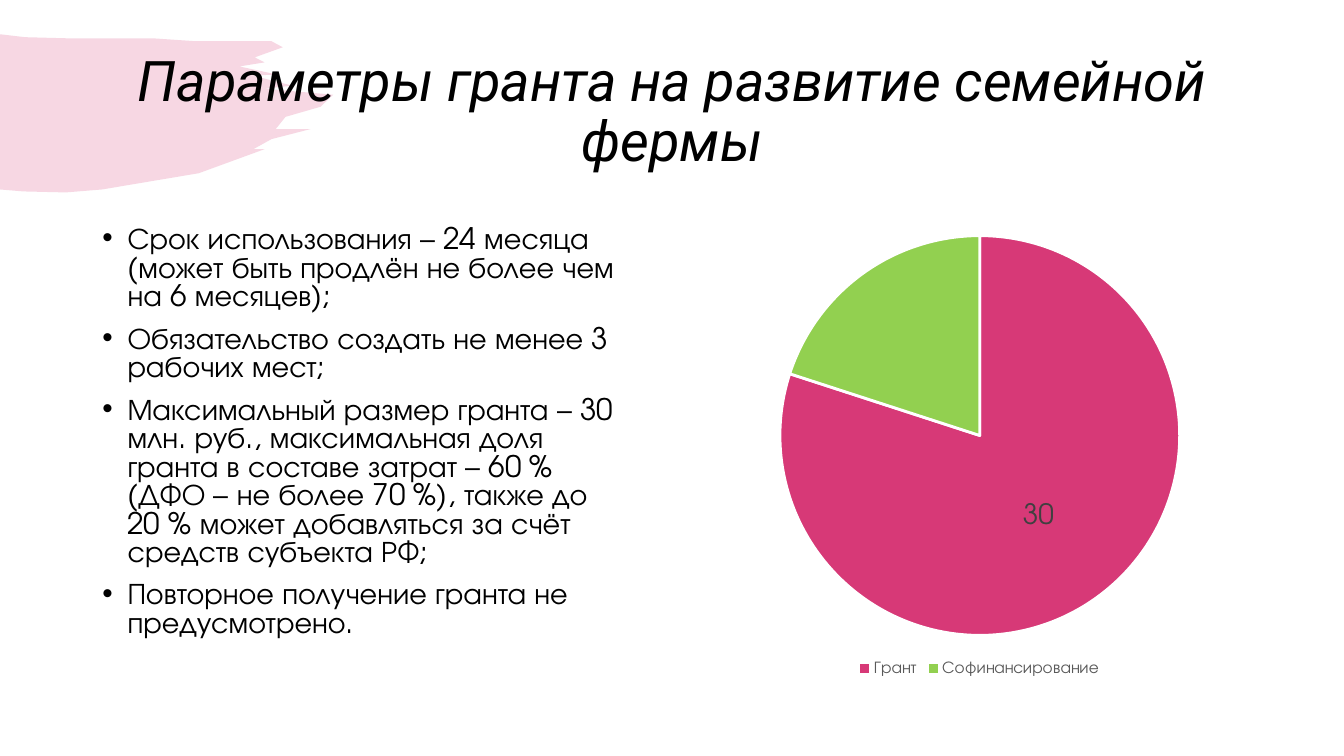
"""Build a slide on the terms of a family farm grant, with bullets and a pie chart."""
import lxml.etree
import pptx
import pptx.chart.data
import pptx.dml.color
import pptx.enum.chart
import pptx.enum.text
import pptx.oxml.ns
import pptx.util

Pt = pptx.util.Pt
qn = pptx.oxml.ns.qn

PINK = pptx.dml.color.RGBColor(0xD7, 0x39, 0x77)
GREEN = pptx.dml.color.RGBColor(0x92, 0xD0, 0x50)
BLACK = pptx.dml.color.RGBColor(0x00, 0x00, 0x00)
WHITE = pptx.dml.color.RGBColor(0xFF, 0xFF, 0xFF)
LABEL_GRAY = pptx.dml.color.RGBColor(0x40, 0x40, 0x40)
LEGEND_GRAY = pptx.dml.color.RGBColor(0x59, 0x59, 0x59)

TITLE = "Параметры гранта на развитие семейной фермы"
TERMS = [
    "Срок использования – 24 месяца (может быть продлён не более чем на 6 месяцев);",
    "Обязательство создать не менее 3 рабочих мест;",
    "Максимальный размер гранта – 30 млн. руб., максимальная доля гранта в составе затрат – 60 % "
    "(ДФО – не более 70 %), также до 20 % может добавляться за счёт средств субъекта РФ;",
    "Повторное получение гранта не предусмотрено.",
]
SHARES = [("Грант", 30, PINK), ("Софинансирование", 7.5, GREEN)]

BRUSH = [
    (0, 24.5), (18, 26.6), (48, 27.4), (109, 27.4), (140, 29.5), (179, 29.5), (194, 29.5),
    (202, 33.8), (182, 41), (189, 44.6), (171, 47.5), (198, 53.3), (181, 54),
    (197, 58.3), (209, 61.2), (189, 63.4), (238, 67.7), (229, 76.3), (204, 83.5),
    (197, 92.2), (222, 92.2), (194, 99.4), (181, 106.6), (189, 106.6),
    (142, 123.8), (73, 135.4), (47, 137.5), (17, 136.8), (0, 135.4),
]


def write(para, text, *, font, size, color=BLACK, italic=False, align=None,
          spacing=0.9, before=0, bullet=None, indent=18):
    para.alignment = align
    para.line_spacing = spacing
    para.space_before = Pt(before)
    span = para.add_run()
    span.text = text
    span.font.name = font
    span.font.size = Pt(size)
    span.font.italic = italic
    span.font.color.rgb = color
    if bullet:
        properties = para._p.get_or_add_pPr()
        properties.set("marL", str(Pt(indent)))
        properties.set("indent", str(-Pt(indent)))
        lxml.etree.SubElement(properties, qn("a:buFont")).set("typeface", "Arial")
        lxml.etree.SubElement(properties, qn("a:buChar")).set("char", bullet)


class GrantPage:
    heading_font = "Roboto"
    body_font = "TeX Gyre Adventor"

    def __init__(self, page):
        self.page = page

    def brush(self, outline, color, opacity):
        start, *rest = [(Pt(x), Pt(y)) for x, y in outline]
        builder = self.page.shapes.build_freeform(*start)
        builder.add_line_segments(rest, close=True)
        shape = builder.convert_to_shape()
        shape.shadow.inherit = False
        shape.line.fill.background()
        shape.fill.solid()
        shape.fill.fore_color.rgb = color
        tint = shape._element.spPr.find(".//" + qn("a:srgbClr"))
        lxml.etree.SubElement(tint, qn("a:alpha")).set("val", str(opacity * 1000))

    def text(self, area, lines, anchor, **style):
        box = self.page.shapes.add_textbox(*map(Pt, area))
        frame = box.text_frame
        frame.word_wrap = True
        frame.vertical_anchor = anchor
        for index, line in enumerate(lines):
            para = frame.add_paragraph() if index else frame.paragraphs[0]
            write(para, line, **style)

    def style_font(self, font, size, color):
        font.name = self.body_font
        font.size = Pt(size)
        font.color.rgb = color

    def pie(self, area, shares):
        data = pptx.chart.data.CategoryChartData()
        data.categories = [name for name, _, _ in shares]
        data.add_series("Series 1", [value for _, value, _ in shares])
        chart = self.page.shapes.add_chart(
            pptx.enum.chart.XL_CHART_TYPE.PIE, *map(Pt, area), data).chart
        self.style_font(chart.font, 10, BLACK)
        chart.has_title = False
        chart.has_legend = True
        chart.legend.position = pptx.enum.chart.XL_LEGEND_POSITION.BOTTOM
        chart.legend.include_in_layout = False
        self.style_font(chart.legend.font, 12, LEGEND_GRAY)
        chart.plots[0].vary_by_categories = True
        series = chart.plots[0].series[0]
        for index, (_, _, color) in enumerate(shares):
            piece = series.points[index].format
            piece.fill.solid()
            piece.fill.fore_color.rgb = color
            piece.line.color.rgb = WHITE
            piece.line.width = Pt(2)
        series.data_labels.show_value = False
        label = series.points[0].data_label
        self.style_font(label.font, 20, LABEL_GRAY)
        label.position = pptx.enum.chart.XL_LABEL_POSITION.CENTER


def main():
    deck = pptx.Presentation()
    deck.slide_width, deck.slide_height = Pt(960), Pt(540)
    grant = GrantPage(deck.slides.add_slide(deck.slide_layouts[6]))
    anchors = pptx.enum.text.MSO_ANCHOR
    grant.brush(BRUSH, PINK, opacity=20)
    grant.text((66, 28.75, 828, 104.4), [TITLE], anchors.MIDDLE, font=grant.heading_font,
               size=40, italic=True, align=pptx.enum.text.PP_ALIGN.CENTER)
    grant.text((66, 158.4, 389, 327.6), TERMS, anchors.TOP, font=grant.body_font,
               size=21.2, spacing=0.8, before=10, bullet="•")
    grant.pie((505.4, 158.4, 389, 327.6), SHARES)
    deck.save("out.pptx")


if __name__ == "__main__":
    main()
